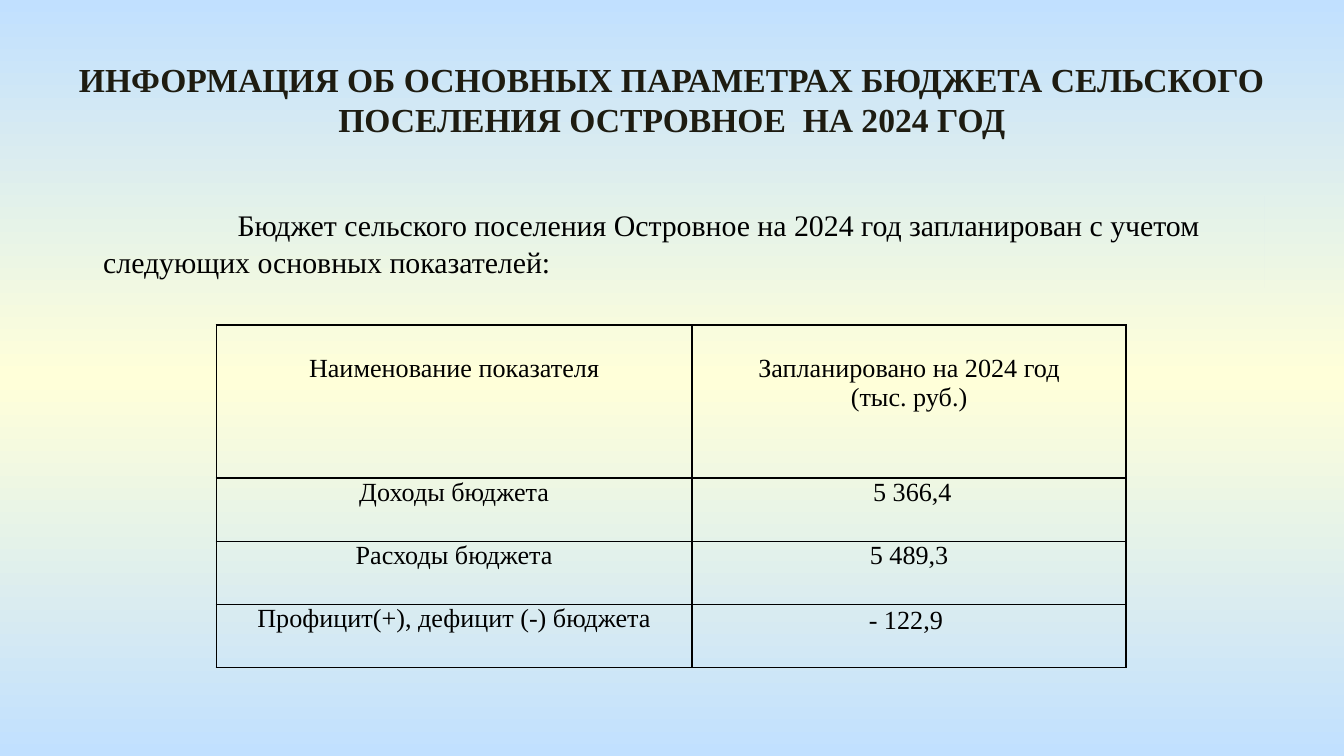
from copy import deepcopy
from dataclasses import dataclass, field

from lxml import etree
from pptx import Presentation
from pptx import util as u
from pptx.dml.color import RGBColor
from pptx.enum import shapes, text
from pptx.oxml import ns

WIDTH = u.Inches(10)
HEIGHT = WIDTH * 9 // 16


@dataclass(frozen=True)
class Theme:
    sky: str = "C1E0FF"
    cream: str = "FFFFD9"
    ink: str = "000000"
    heading: str = "1E1C11"
    serif: str = "Times New Roman"
    sans: str = "Calibri"
    heading_size: int = 18
    body_size: int = 16
    table_size: int = 14
    border: float = 1


@dataclass(frozen=True)
class Box:
    left: float
    top: float
    width: float
    height: float

    def place(self) -> tuple[int, ...]:
        return (int(WIDTH * self.left), int(HEIGHT * self.top),
                int(WIDTH * self.width), int(HEIGHT * self.height))


@dataclass(frozen=True)
class Indicator:
    name: str
    plan: str
    margins: dict = field(default_factory=dict)


THEME = Theme()
HEADING_BOX = Box(0.035, 0.069, 0.93, 0.126)
INTRO_BOX = Box(0.067, 0.26, 0.874, 0.12)
TABLE_BOX = Box(0.161, 0.43, 0.677, 0.453)
COLUMN_WIDTHS = (3.54, 3.23)
HEADER_HEIGHT, ROW_HEIGHT = 1.14, 0.47
INTRO_TAB = 1
CELL_MARGINS = dict(margin_left=0.07, margin_right=0.07, margin_top=0, margin_bottom=0)
INDICATORS = (
    Indicator("Наименование показателя", "Запланировано на 2024 год\n(тыс. руб.)",
              dict(margin_top=0.22)),
    Indicator("Доходы бюджета", " 5 366,4"),
    Indicator("Расходы бюджета", "5 489,3"),
    Indicator("Профицит(+), дефицит (-) бюджета", "- 122,9 "),
)
LAST_PLAN_MARGINS = dict(margin_left=0.01, margin_right=0.01, margin_top=0.01)


def add_run(paragraph, words: str, size: int, color: str = THEME.ink,
            face: str = THEME.serif, bold: bool = False) -> None:
    run = paragraph.add_run()
    run.text = words
    for key, value in dict(size=u.Pt(size), name=face, bold=bold).items():
        setattr(run.font, key, value)
    run.font.color.rgb = RGBColor.from_string(color)


def paint_background(slide) -> None:
    fill = slide.background.fill
    fill.gradient()
    fill.gradient_angle = 270
    stop_list = next(slide.element.iter(ns.qn("a:gsLst")))
    stop_list.insert(1, deepcopy(stop_list[0]))
    colors = (THEME.sky, THEME.cream, THEME.sky)
    for index, (stop, color) in enumerate(zip(fill.gradient_stops, colors)):
        stop.position = index / 2
        stop.color.rgb = RGBColor.from_string(color)


def add_intro(slide) -> None:
    intro = slide.shapes.add_shape(shapes.MSO_SHAPE.RECTANGLE, *INTRO_BOX.place())
    intro.shadow.inherit = False
    intro.line.fill.background()
    intro.element.set("useBgFill", "1")
    frame = intro.text_frame
    frame.word_wrap = True
    frame.vertical_anchor = text.MSO_ANCHOR.TOP
    paragraph = frame.paragraphs[0]
    paragraph.alignment = text.PP_ALIGN.LEFT
    tabs = etree.SubElement(paragraph._p.get_or_add_pPr(), ns.qn("a:tabLst"))
    etree.SubElement(tabs, ns.qn("a:tab"), pos=str(u.Inches(INTRO_TAB)), algn="l")
    add_run(paragraph, " \t", THEME.heading_size, face=THEME.sans)
    add_run(paragraph, "Бюджет сельского поселения Островное на 2024 год запланирован "
            "с учетом следующих основных показателей:", THEME.body_size)


def add_heading(slide) -> None:
    frame = slide.shapes.add_textbox(*HEADING_BOX.place()).text_frame
    frame.word_wrap = True
    paragraph = frame.paragraphs[0]
    paragraph.alignment = text.PP_ALIGN.CENTER
    add_run(paragraph, "ИНФОРМАЦИЯ ОБ ОСНОВНЫХ ПАРАМЕТРАХ БЮДЖЕТА СЕЛЬСКОГО "
            "ПОСЕЛЕНИЯ ОСТРОВНОЕ  НА 2024 ГОД", THEME.heading_size, THEME.heading, bold=True)


def add_borders(cell) -> None:
    properties = cell._tc.get_or_add_tcPr()
    for index, side in enumerate(("lnL", "lnR", "lnT", "lnB")):
        border = etree.Element(ns.qn(f"a:{side}"), w=str(u.Pt(THEME.border)))
        solid = etree.SubElement(border, ns.qn("a:solidFill"))
        etree.SubElement(solid, ns.qn("a:srgbClr"), val=THEME.ink)
        properties.insert(index, border)


def fill_cell(cell, words: str, margins: dict) -> None:
    for key, value in (CELL_MARGINS | margins).items():
        setattr(cell, key, u.Inches(value))
    cell.fill.background()
    add_borders(cell)
    frame = cell.text_frame
    for index, line in enumerate(words.split("\n")):
        paragraph = frame.add_paragraph() if index else frame.paragraphs[0]
        paragraph.alignment = text.PP_ALIGN.CENTER
        add_run(paragraph, line, THEME.table_size)


def add_indicators(slide) -> None:
    table = slide.shapes.add_table(len(INDICATORS), len(COLUMN_WIDTHS),
                                   *TABLE_BOX.place()).table
    for key in ("first_row", "horz_banding"):
        setattr(table, key, False)
    for column, width in zip(table.columns, COLUMN_WIDTHS):
        column.width = u.Inches(width)
    for index, indicator in enumerate(INDICATORS):
        table.rows[index].height = u.Inches(ROW_HEIGHT if index else HEADER_HEIGHT)
        last = index == len(INDICATORS) - 1
        fill_cell(table.cell(index, 0), indicator.name, indicator.margins)
        fill_cell(table.cell(index, 1), indicator.plan,
                  LAST_PLAN_MARGINS if last else indicator.margins)


def main() -> None:
    deck = Presentation()
    deck.slide_width, deck.slide_height = WIDTH, HEIGHT
    slide = deck.slides.add_slide(deck.slide_layouts[6])
    paint_background(slide)
    add_intro(slide)
    add_heading(slide)
    add_indicators(slide)
    deck.save("out.pptx")


if __name__ == "__main__":
    main()
